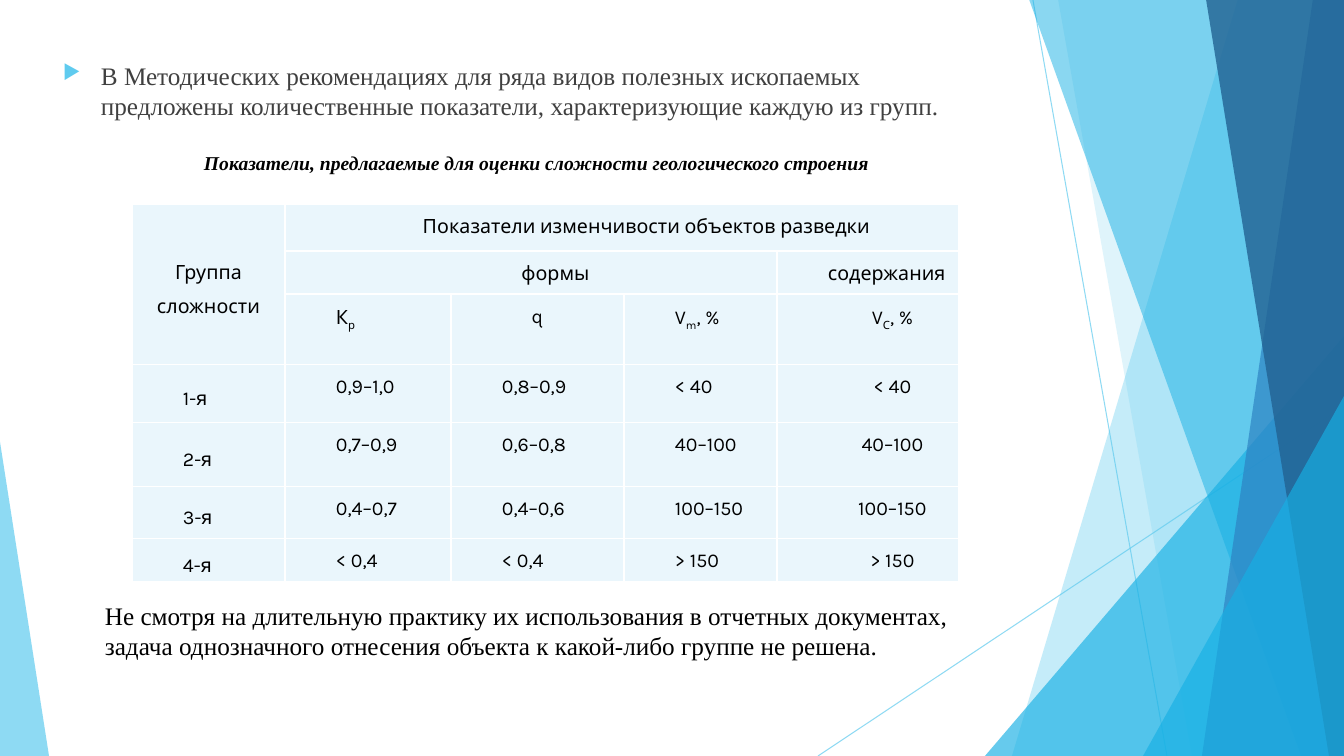
from lxml.etree import SubElement
from pptx import Presentation
from pptx.dml.color import RGBColor
from pptx.enum.shapes import MSO_CONNECTOR as CONN, MSO_SHAPE as SHAPE
from pptx.enum.text import MSO_ANCHOR as ANCHOR, PP_ALIGN as ALIGN
from pptx.oxml.ns import qn
from pptx.util import Emu, Pt

W, H = 1344, 756
SCALE = 12192000 / W
COLORS = {
    "sky": "5FCBEF", "cyan": "17B0E4", "blue": "2E83C3", "navy": "226292",
    "cell": "EAF6FC", "white": "FFFFFF", "black": "000000", "gray": "404040",
}
SERIF, SANS = "Times New Roman", "Karla"
INDENT = 49


def px(n):
    return Emu(round(n * SCALE))


def rgb(name):
    return RGBColor.from_string(COLORS[name])


def set_alpha(s, percent):
    for clr in s._element.iter(qn("a:srgbClr")):
        SubElement(clr, qn("a:alpha"), val=str(percent * 1000))


def add_text(tf, pieces, size=14, font=SANS, color="black", bold=False, italic=False,
             align=ALIGN.LEFT, margin=0, indent=0, spacing=None, before=None, bullet=None):
    """Write one paragraph; pieces are strings or (text, baseline) pairs."""
    tf.word_wrap = True
    p = tf.paragraphs[0]
    p.alignment = align
    if spacing:
        p.line_spacing = spacing
    if before:
        p.space_before = Pt(before)
    pPr = p._p.get_or_add_pPr()
    pPr.set("marL", str(px(margin)))
    pPr.set("indent", str(px(indent)))
    if bullet:
        SubElement(SubElement(pPr, qn("a:buClr")), qn("a:srgbClr"), val=COLORS["sky"])
        SubElement(pPr, qn("a:buSzPct"), val="80000")
        SubElement(pPr, qn("a:buChar"), char=bullet)
    for piece in [pieces] if isinstance(pieces, str) else pieces:
        text, base = (piece, 0) if isinstance(piece, str) else piece
        for i, line in enumerate(text.split("\n")):
            if i:
                p.add_line_break()
            r = p.add_run()
            r.text = line
            f = r.font
            f.size, f.name, f.bold, f.italic = Pt(size), font, bold, italic
            f.color.rgb = rgb(color)
            if base:
                r._r.get_or_add_rPr().set("baseline", str(base * 1000))


def add_box(slide, x, y, w, h, text, **fmt):
    s = slide.shapes.add_textbox(px(x), px(y), px(w), px(h))
    add_text(s.text_frame, text, **fmt)


def paint(s, color, alpha):
    s.shadow.inherit = False
    s.fill.solid()
    s.fill.fore_color.rgb = rgb(color)
    s.line.fill.background()
    set_alpha(s, alpha)


def add_ray(slide, x1, y1, x2, y2):
    s = slide.shapes.add_connector(CONN.STRAIGHT, px(x1), px(y1), px(x2), px(y2))
    s.line.width = Pt(0.75)
    s.line.color.rgb = rgb("sky")
    set_alpha(s, 70)
    SubElement(s._element.spPr, qn("a:effectLst"))


def add_panel(slide, top_x, bottom_x, color, alpha):
    """A full-height panel with a slanted left side, flush with the right edge."""
    fb = slide.shapes.build_freeform(px(top_x), px(-1))
    fb.add_line_segments([(px(x), px(y)) for x, y in
                          ((W, -1), (W, H), (bottom_x, H))], close=True)
    paint(fb.convert_to_shape(), color, alpha)


def add_triangle(slide, x, y, w, apex, color, alpha):
    s = slide.shapes.add_shape(SHAPE.ISOSCELES_TRIANGLE, px(x), px(y), px(w), px(H - y))
    s.adjustments[0] = apex
    paint(s, color, alpha)


def style_cell(cell):
    cell.margin_left = cell.margin_right = px(2)
    cell.margin_top = cell.margin_bottom = 0
    tcPr = cell._tc.get_or_add_tcPr()
    for side in ("lnL", "lnR", "lnT", "lnB"):
        ln = SubElement(tcPr, qn("a:" + side), w=str(Pt(1)))
        SubElement(SubElement(ln, qn("a:solidFill")), qn("a:srgbClr"), val=COLORS["white"])
    cell.fill.solid()
    cell.fill.fore_color.rgb = rgb("cell")


def add_indicators(slide):
    cols, rows = (153, 166, 173, 153, 182), (47, 43, 43, 58, 64, 52, 43)
    tbl = slide.shapes.add_table(len(rows), len(cols), px(132), px(204),
                                 px(sum(cols)), px(sum(rows))).table
    tbl.first_row = tbl.horz_banding = False
    for col, w in zip(tbl.columns, cols):
        col.width = px(w)
    for row, h in zip(tbl.rows, rows):
        row.height = px(h)
    for cell in tbl.iter_cells():
        style_cell(cell)
    for first, last in (((0, 0), (2, 0)), ((0, 1), (0, 4)), ((1, 1), (1, 3))):
        tbl.cell(*first).merge(tbl.cell(*last))

    content = [
        ["Группа\nсложности", "Показатели изменчивости объектов разведки", None, None, None],
        [None, "формы", None, None, "содержания"],
        [None, ["К", ("р", -25)], "q", ["V", ("m", -25), ", %"], ["V", ("С", -25), ", %"]],
        ["1-я", "0,9–1,0", "0,8–0,9", "< 40", "< 40"],
        ["2-я", "0,7–0,9", "0,6–0,8", "40–100", "40–100"],
        ["3-я", "0,4–0,7", "0,4–0,6", "100–150", "100–150"],
        ["4-я", "< 0,4", "< 0,4", "> 150", "> 150"],
    ]
    centered = {(0, 0), (0, 1), (1, 1), (2, 2)} | {(r, 4) for r in range(2, 7)}
    flush = {(0, 0), (2, 2)}
    for r, line in enumerate(content):
        for c, text in enumerate(line):
            if text is None:
                continue
            cell = tbl.cell(r, c)
            cell.vertical_anchor = ANCHOR.MIDDLE if c == 0 else ANCHOR.TOP
            add_text(cell.text_frame, text, spacing=1.5,
                     indent=0 if (r, c) in flush else INDENT,
                     align=ALIGN.CENTER if (r, c) in centered else ALIGN.JUSTIFY)


def main():
    prs = Presentation()
    prs.slide_width, prs.slide_height = px(W), px(H)
    slide = prs.slides.add_slide(prs.slide_layouts[6])

    # Faceted background
    add_ray(slide, 1033, 0, 1167, H)
    add_ray(slide, W, 406, 818, H)
    add_panel(slide, 1238, 1012, "sky", 36)
    add_panel(slide, 1058, 1192, "sky", 20)
    add_triangle(slide, 985, 336, 359, 1, "cyan", 66)
    add_panel(slide, 1029, 1301, "cyan", 50)
    add_panel(slide, 1313, 1202, "blue", 70)
    add_panel(slide, 1206, 1329, "navy", 80)
    add_triangle(slide, 1143, 396, 201, 1, "cyan", 66)
    add_triangle(slide, 0, 442, 49, 0, "sky", 70)

    # Introduction
    add_box(slide, 53, 55, 948, 168,
            "В Методических рекомендациях для ряда видов полезных ископаемых предложены "
            "количественные показатели, характеризующие каждую из групп.",
            size=18, font=SERIF, color="gray", margin=38, indent=-38, before=10, bullet="▶")

    # Table with its caption
    add_indicators(slide)
    add_box(slide, 145, 146, 924, 64,
            "Показатели, предлагаемые для оценки сложности геологического строения",
            font=SERIF, bold=True, italic=True, indent=INDENT)

    # Conclusion
    add_box(slide, 95, 595, 878, 72,
            "Не смотря на длительную практику их использования в отчетных документах, "
            "задача однозначного отнесения объекта к какой-либо группе не решена.",
            size=18, font=SERIF)

    prs.save("out.pptx")


if __name__ == "__main__":
    main()
